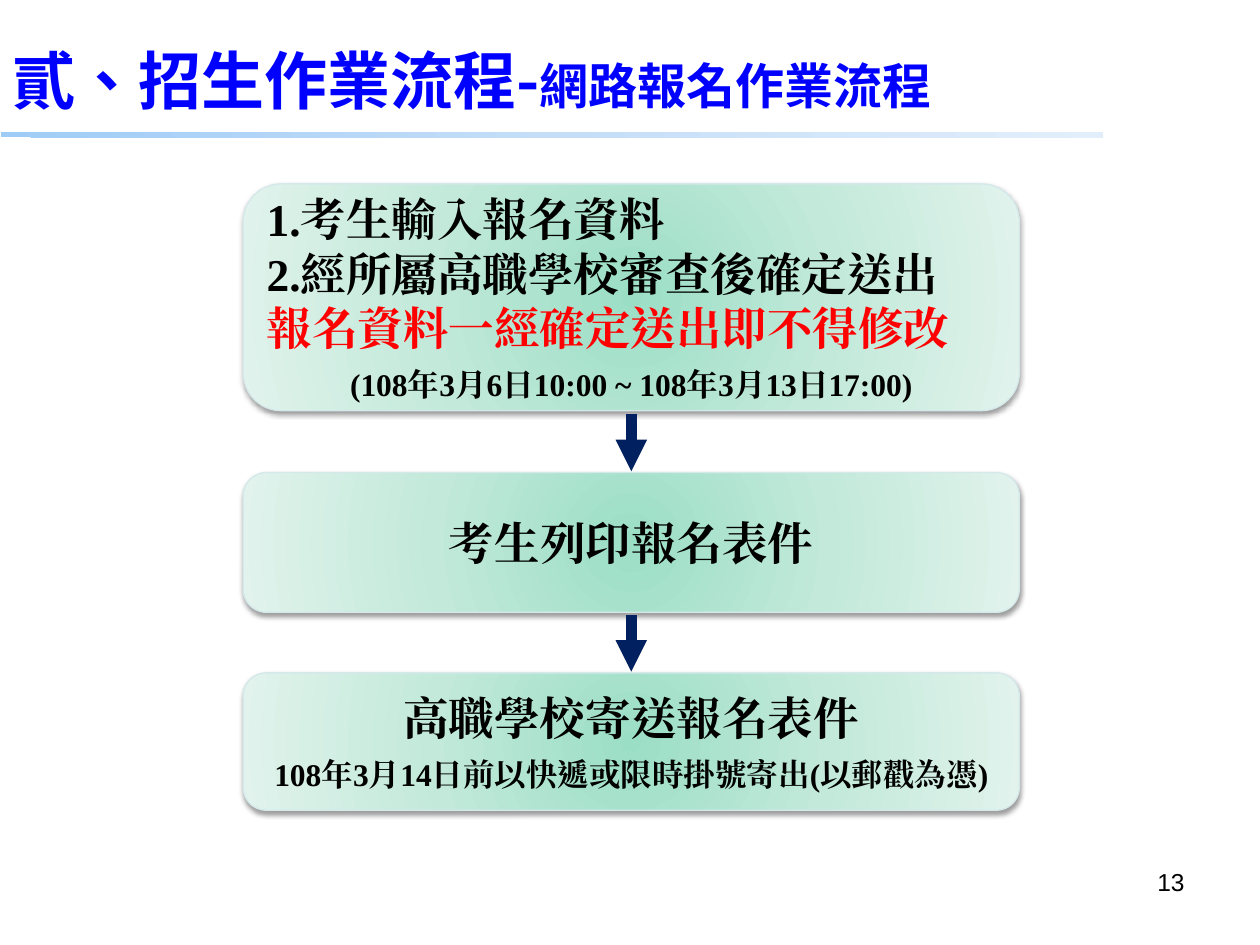
from lxml import etree
from pptx import Presentation
from pptx.dml.color import RGBColor
from pptx.enum.shapes import MSO_CONNECTOR, MSO_SHAPE
from pptx.enum.text import MSO_ANCHOR, PP_ALIGN
from pptx.oxml import parse_xml
from pptx.oxml.ns import nsdecls, qn
from pptx.util import Pt

LEFT, CENTER, RIGHT = PP_ALIGN.LEFT, PP_ALIGN.CENTER, PP_ALIGN.RIGHT
MIDDLE, TOP = MSO_ANCHOR.MIDDLE, MSO_ANCHOR.TOP
BLACK = RGBColor(0, 0, 0)
RED = RGBColor(0xFF, 0, 0)
BLUE = RGBColor(0, 0, 0xFF)
NAVY = RGBColor(0x00, 0x20, 0x60)
EDGE = RGBColor(0xD5, 0xE8, 0xEA)
GREENS = [RGBColor(0x9B, 0xDE, 0xC6), RGBColor(0xC2, 0xE9, 0xDA), RGBColor(0xE1, 0xF3, 0xEC)]
SKIES = [RGBColor(0x9F, 0xCC, 0xF6), RGBColor(0xC4, 0xDE, 0xF8), RGBColor(0xE2, 0xEE, 0xFB)]
SANS, SERIF, NUMBER_FONT = "Noto Sans CJK SC", "Times New Roman", "Arial"
RADIAL = ('<a:path path="circle"><a:fillToRect l="50000" t="50000" '
          'r="50000" b="50000"/></a:path>')
DIAGONAL = '<a:lin ang="18900000" scaled="0"/>'
SHADOW = ('<a:outerShdw blurRad="39370" dist="20320" dir="5400000" rotWithShape="0">'
          '<a:srgbClr val="000000"><a:alpha val="38000"/></a:srgbClr></a:outerShdw>')


def set_gradient(shape, colors, direction):
    """Fill with three evenly spaced stops; direction is the DrawingML for the path."""
    stops = "".join(f'<a:gs pos="{50000 * i}"><a:srgbClr val="{color}"/></a:gs>'
                    for i, color in enumerate(colors))
    shape.fill.background()
    blank = shape._element.spPr.find(qn("a:noFill"))
    blank.getparent().replace(blank, parse_xml(
        f'<a:gradFill rotWithShape="1" {nsdecls("a")}>'
        f'<a:gsLst>{stops}</a:gsLst>{direction}</a:gradFill>'))


def add_span(para, text, size, font, color, bold=True):
    span = para.add_run()
    span.text = text
    span.font.size = Pt(size)
    span.font.bold = bold
    span.font.name = font
    span.font.color.rgb = color
    properties = span._r.get_or_add_rPr()
    properties.set("lang", "zh-TW")
    etree.SubElement(properties, qn("a:ea")).set("typeface", font)


def add_text_box(page, left, top, width, height, anchor, align):
    """Add a wrapping text box and return its first paragraph."""
    frame = page.shapes.add_textbox(Pt(left), Pt(top), Pt(width), Pt(height)).text_frame
    frame.word_wrap = True
    frame.vertical_anchor = anchor
    para = frame.paragraphs[0]
    para.alignment = align
    return para


def add_header(page, left, top, width, height):
    title = add_text_box(page, left, top, width, height, MIDDLE, LEFT)
    add_span(title, "貳、招生作業流程-", 36, SANS, BLUE)
    add_span(title, "網路報名作業流程", 28, SANS, BLUE)
    rule = page.shapes.add_shape(MSO_SHAPE.RECTANGLE, Pt(left + 0.7), Pt(75.6),
                                 Pt(629.3), Pt(2.9))
    rule.shadow.inherit = False
    rule.line.fill.background()
    set_gradient(rule, SKIES, DIAGONAL)


def add_step(page, left, top, width, height, lines):
    """Each line is (text, size, color, alignment, space before)."""
    step = page.shapes.add_shape(MSO_SHAPE.FLOWCHART_ALTERNATE_PROCESS,
                                 Pt(left), Pt(top), Pt(width), Pt(height))
    set_gradient(step, GREENS, RADIAL)
    step.line.color.rgb = EDGE
    step.line.width = Pt(0.75)
    step.shadow.inherit = False
    step._element.spPr.find(qn("a:effectLst")).append(
        parse_xml(SHADOW.replace("<a:outerShdw", f"<a:outerShdw {nsdecls('a')}", 1)))
    frame = step.text_frame
    frame.word_wrap = False
    frame.vertical_anchor = MIDDLE
    for i, (text, size, color, align, before) in enumerate(lines):
        para = frame.add_paragraph() if i else frame.paragraphs[0]
        para.alignment = align
        if before:
            para.space_before = Pt(before)
        add_span(para, text, size, SERIF, color)


def add_arrow(page, x, top, bottom):
    arrow = page.shapes.add_connector(MSO_CONNECTOR.STRAIGHT, Pt(x), Pt(top), Pt(x), Pt(bottom))
    arrow.line.color.rgb = NAVY
    arrow.line.width = Pt(6)
    etree.SubElement(arrow.line._get_or_add_ln(), qn("a:tailEnd")).set("type", "triangle")
    etree.SubElement(arrow._element.spPr, qn("a:effectLst"))


def add_flow(page, left, width):
    steps = [
        (105.1, 129.6, [
            ("1.考生輸入報名資料", 26, BLACK, LEFT, 0),
            ("2.經所屬高職學校審查後確定送出", 26, BLACK, LEFT, 0),
            ("報名資料一經確定送出即不得修改", 26, RED, LEFT, 0),
            ("(108年3月6日10:00 ~ 108年3月13日17:00)", 18, BLACK, CENTER, 6)]),
        (270, 79.9, [("考生列印報名表件", 26, BLACK, CENTER, 0)]),
        (384.5, 78.5, [
            ("高職學校寄送報名表件", 26, BLACK, CENTER, 0),
            ("108年3月14日前以快遞或限時掛號寄出(以郵戳為憑)", 18, BLACK, CENTER, 6)]),
    ]
    for top, height, lines in steps:
        add_step(page, left, top, width, height, lines)
    for (top, height, _), (next_top, _, _) in zip(steps, steps[1:]):
        add_arrow(page, left + width / 2, top + height + 1.8, next_top - 0.7)


def add_page_number(page, left, top, width, height):
    number = add_text_box(page, left, top, width, height, TOP, RIGHT)
    add_span(number, "13", 14, NUMBER_FONT, BLACK, bold=False)


def main():
    deck = Presentation()
    deck.slide_width, deck.slide_height = Pt(720), Pt(540)
    page = deck.slides.add_slide(deck.slide_layouts[6])
    add_header(page, 0, 20.2, 632.2, 49.7)
    add_flow(page, 139, 443.5)
    add_page_number(page, 516.2, 491.8, 167.8, 37.4)
    deck.save("out.pptx")


if __name__ == "__main__":
    main()
